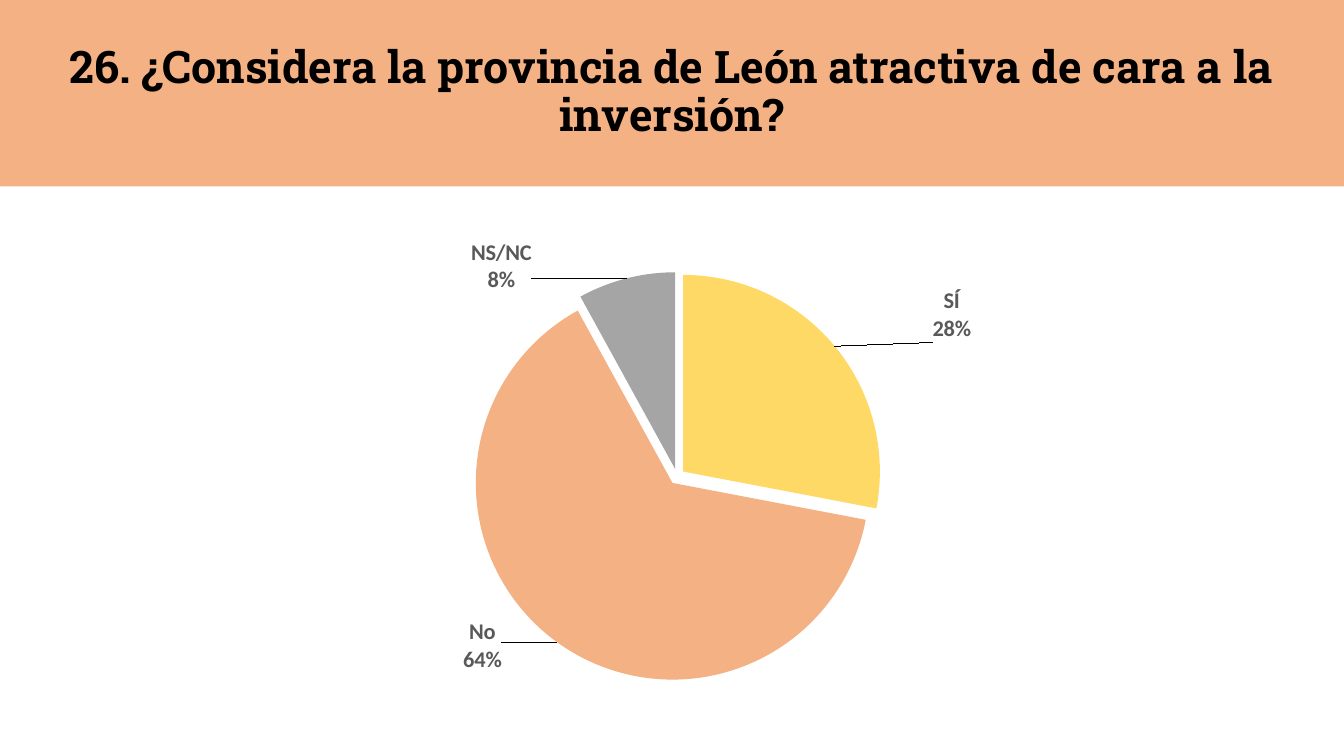
from lxml import etree
from pptx import Presentation
from pptx.chart.data import CategoryChartData
from pptx.dml.color import RGBColor
from pptx.enum.chart import XL_CHART_TYPE, XL_LABEL_POSITION
from pptx.enum.text import MSO_ANCHOR, PP_ALIGN
from pptx.oxml import parse_xml
from pptx.oxml.ns import nsdecls
from pptx.util import Inches, Pt

PIE = XL_CHART_TYPE.PIE
OUTSIDE = XL_LABEL_POSITION.OUTSIDE_END
CENTER, MIDDLE = PP_ALIGN.CENTER, MSO_ANCHOR.MIDDLE

QUESTION = "26. ¿Considera la provincia de León atractiva de cara a la inversión?"
# answer, percentage, colour, label shift as shares of the chart's size
ANSWERS = [
    ("SÍ", 28, "yellow", (0.09, 0)),
    ("No", 64, "orange", (-0.05, -0.04)),
    ("NS/NC", 8, "gray", (-0.09, 0.03)),
]
COLORS = {"yellow": "FFD966", "orange": "F4B183", "gray": "A5A5A5",
          "label": "595959", "title": "000000"}
SLIDE_W, SLIDE_H = 13.33, 7.5
BANNER_H = 1.85
CHART_BOX = (1.53, 0.41, 10.27, 6.95)
PLOT = {"x": 0.315, "y": 0.296, "w": 0.38, "h": 0.651}
EXPLOSION = 4


def color(name):
    return RGBColor.from_string(COLORS[name])


def format_font(font, *, name, size, tint, bold=True):
    font.name, font.size, font.bold = name, Pt(size), bold
    font.color.rgb = color(tint)


def write_text(frame, text, *, align=CENTER, spacing=0.9, **font):
    frame.word_wrap = True
    frame.vertical_anchor = MIDDLE
    paragraph = frame.paragraphs[0]
    paragraph.alignment, paragraph.line_spacing = align, spacing
    run = paragraph.add_run()
    run.text = text
    format_font(run.font, **font)


def manual_layout(places, inner=False):
    """Return a c:layout element placing a chart part by shares."""
    target = '<c:layoutTarget val="inner"/>' if inner else ""
    modes = '<c:xMode val="edge"/><c:yMode val="edge"/>' if inner else ""
    sides = "".join(f'<c:{side} val="{share}"/>' for side, share in places.items())
    return parse_xml(f'<c:layout {nsdecls("c")}><c:manualLayout>{target}{modes}{sides}'
                     '</c:manualLayout></c:layout>')


def point_label(index, shift):
    label = parse_xml(
        f'<c:dLbl {nsdecls("c")}><c:idx val="{index}"/>'
        '<c:dLblPos val="outEnd"/><c:showLegendKey val="0"/><c:showVal val="0"/>'
        '<c:showCatName val="1"/><c:showSerName val="0"/><c:showPercent val="1"/>'
        '<c:showBubbleSize val="0"/><c:separator>\n</c:separator></c:dLbl>')
    label.insert(1, manual_layout(dict(zip("xy", shift))))
    return label


def add_banner(slide):
    banner = slide.shapes.title
    banner.left = banner.top = 0
    banner.width, banner.height = Inches(SLIDE_W), Inches(BANNER_H)
    banner.fill.solid()
    banner.fill.fore_color.rgb = color("orange")
    write_text(banner.text_frame, QUESTION, name="Roboto Slab", size=32, tint="title")


def add_pie(slide):
    data = CategoryChartData(number_format="0")
    data.categories = [answer for answer, *_ in ANSWERS]
    data.add_series("Series 1", [share for _, share, *_ in ANSWERS])
    chart = slide.shapes.add_chart(PIE, *map(Inches, CHART_BOX), data).chart
    chart.has_legend = chart.has_title = False
    format_font(chart.font, name="Calibri", size=10, tint="title", bold=False)

    plot_area = chart.plots[0]._element.getparent()
    for layout in plot_area.findall("c:layout", plot_area.nsmap):
        plot_area.remove(layout)
    plot_area.insert(0, manual_layout(PLOT, inner=True))

    pie = chart.plots[0].series[0]
    labels = pie.data_labels
    labels.show_value = False
    labels.show_category_name = labels.show_percentage = True
    labels.number_format, labels.number_format_is_linked = "0%", False
    labels.position = OUTSIDE
    format_font(labels.font, name="Calibri", size=16, tint="label")
    shared = [labels._element.find(f"c:{tag}", plot_area.nsmap) for tag in ("numFmt", "txPr")]

    for index, (_, _, tint, shift) in enumerate(ANSWERS):
        fill = pie.points[index].format.fill
        fill.solid()
        fill.fore_color.rgb = color(tint)
        label = point_label(index, shift)
        for place, part in enumerate(shared, start=2):
            label.insert(place, parse_xml(etree.tostring(part)))
        labels._element.insert(index, label)
    for shape_format in pie._element.findall("c:dPt/c:spPr", plot_area.nsmap):
        shape_format.addprevious(parse_xml(f'<c:explosion {nsdecls("c")} val="{EXPLOSION}"/>'))


def main():
    deck = Presentation()
    deck.slide_width, deck.slide_height = Inches(SLIDE_W), Inches(SLIDE_H)
    slide = deck.slides.add_slide(deck.slide_layouts[5])
    add_banner(slide)
    add_pie(slide)
    deck.save("out.pptx")


if __name__ == "__main__":
    main()
